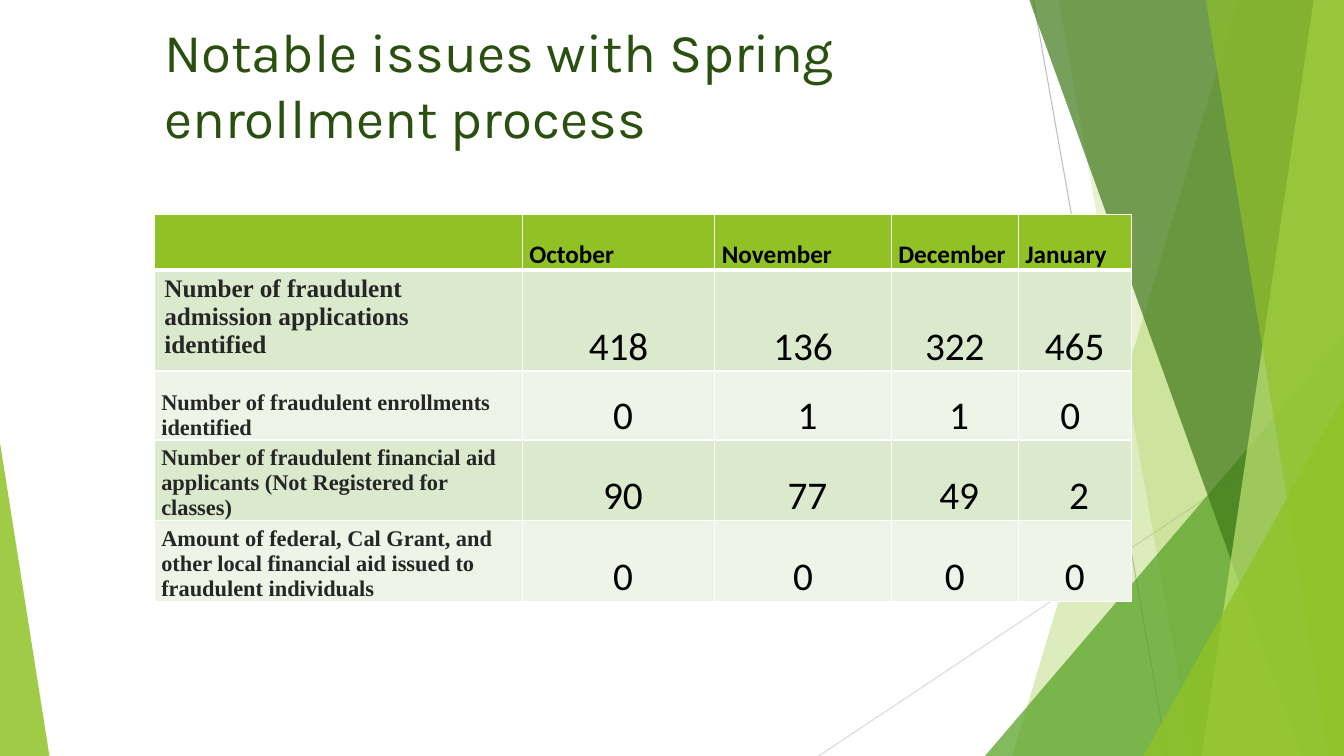
"""Build a slide with a table of fraud counts by month beside green shards."""
import lxml.etree
import pptx
import pptx.dml.color
import pptx.enum.shapes
import pptx.enum.text
import pptx.oxml
import pptx.oxml.ns
import pptx.util

COLORS = {
    "lime": "90C226", "green": "54A021", "forest": "3F7819", "pale": "C0E474",
    "title": "2A5010", "label": "262626", "black": "000000", "white": "FFFFFF",
    "band": "DBE9CD", "light_band": "EEF4E8", "gray": "BFBFBF", "light_gray": "D9D9D9",
}
qn = pptx.oxml.ns.qn
Anchor = pptx.enum.text.MSO_ANCHOR
Align = pptx.enum.text.PP_ALIGN

deck = pptx.Presentation()
deck.slide_width = pptx.util.Inches(13.33)
deck.slide_height = pptx.util.Inches(7.5)
x_share = deck.slide_width / 100
y_share = deck.slide_height / 100
slide = deck.slides.add_slide(deck.slide_layouts[6])


def write(frame, text, size=18, font="Calibri", color="black", bold=False,
          align=Align.LEFT, anchor=Anchor.BOTTOM):
    frame.word_wrap = True
    frame.vertical_anchor = anchor
    paragraph = frame.paragraphs[0]
    paragraph.alignment = align
    run = paragraph.add_run()
    run.text = text
    run.font.size = pptx.util.Pt(size)
    run.font.name = font
    run.font.bold = bold
    run.font.color.rgb = pptx.dml.color.RGBColor.from_string(COLORS[color])


rays = [(76.89, 0, 86.87, 100, "gray"), (100, 53.73, 60.92, 100, "light_gray")]
for x1, y1, x2, y2, color in rays:
    ray = slide.shapes.add_connector(
        pptx.enum.shapes.MSO_CONNECTOR.STRAIGHT,
        round(x1 * x_share), round(y1 * y_share), round(x2 * x_share), round(y2 * y_share))
    ray.line.color.rgb = pptx.dml.color.RGBColor.from_string(COLORS[color])
    ray.line.width = pptx.util.Pt(0.75)
    lxml.etree.SubElement(ray._element.spPr, qn("a:effectLst"))

shards = [
    ("band", (92.12, 75.32), "lime", 30),
    ("band", (78.77, 88.75), "lime", 20),
    ("triangle", (73.29, 44.4, 26.71, 1), "green", 72),
    ("band", (76.59, 96.85), "forest", 70),
    ("band", (97.75, 89.42), "pale", 70),
    ("band", (89.72, 98.87), "lime", 65),
    ("triangle", (85.07, 52.4, 14.93, 1), "lime", 80),
    ("triangle", (0, 58.53, 3.68, 0), "lime", 85),
]
for outline, place, color, opacity in shards:
    if outline == "band":
        top_x, bottom_x = place
        corners = [(100, 0), (100, 100), (bottom_x, 100)]
        edge = slide.shapes.build_freeform(round(top_x * x_share), 0)
        edge.add_line_segments([(x * x_share, y * y_share) for x, y in corners])
        shard = edge.convert_to_shape()
    else:
        left, top, width, apex = place
        shard = slide.shapes.add_shape(
            pptx.enum.shapes.MSO_SHAPE.ISOSCELES_TRIANGLE,
            round(left * x_share), round(top * y_share),
            round(width * x_share), round((100 - top) * y_share))
        shard.adjustments[0] = apex
    shard.shadow.inherit = False
    shard.line.fill.background()
    shard.fill.solid()
    shard.fill.fore_color.rgb = pptx.dml.color.RGBColor.from_string(COLORS[color])
    tint = shard._element.spPr.find(qn("a:solidFill"))[0]
    lxml.etree.SubElement(tint, qn("a:alpha"), val=str(opacity * 1000))

heading = slide.shapes.add_textbox(
    round(11.48 * x_share), round(1.47 * y_share), round(70.52 * x_share), round(19.2 * y_share))
write(heading.text_frame, "Notable issues with Spring enrollment process",
      size=39, font="Karla", color="title", anchor=Anchor.MIDDLE)

records = [
    ["", "October", "November ", "December", "January"],
    ["Number of fraudulent admission applications identified", "418", "136", "322", "465"],
    ["Number of fraudulent enrollments identified", " 0", " 1", " 1", "0 "],
    ["Number of fraudulent financial aid applicants (Not Registered for classes)",
     " 90", " 77", " 49", " 2"],
    ["Amount of federal, Cal Grant, and other local financial aid issued to fraudulent individuals",
     " 0", "0", "0", "0"],
]
column_shares = [27.38, 14.33, 13.13, 9.45, 8.4]
row_shares = [7.33, 12.2, 9.13, 9.87, 9.8]
counts = slide.shapes.add_table(
    len(records), len(column_shares), round(11.48 * x_share), round(28.4 * y_share),
    round(sum(column_shares) * x_share), round(sum(row_shares) * y_share)).table
counts.horz_banding = False
for column, share in zip(counts.columns, column_shares):
    column.width = round(share * x_share)
for row, share in zip(counts.rows, row_shares):
    row.height = round(share * y_share)

for r, record in enumerate(records):
    row_fill = "lime" if r == 0 else "band" if r % 2 else "light_band"
    for c, entry in enumerate(record):
        cell = counts.cell(r, c)
        cell.fill.solid()
        cell.fill.fore_color.rgb = pptx.dml.color.RGBColor.from_string(COLORS[row_fill])
        roomy = r == 1 and c == 0
        if not roomy:
            cell.margin_left = cell.margin_right = pptx.util.Inches(0.07)
            cell.margin_top = cell.margin_bottom = 0
        if r == 0 and entry:
            write(cell.text_frame, entry, bold=True)
        elif c > 0:
            write(cell.text_frame, entry, size=28, align=Align.CENTER)
        elif entry:
            write(cell.text_frame, entry, size=18 if roomy else 16,
                  font="Times New Roman", color="label", bold=True)
        cell.vertical_anchor = Anchor.TOP if roomy else Anchor.BOTTOM
        for i, side in enumerate(["lnL", "lnR", "lnT", "lnB"]):
            heavy = (r, side) in [(0, "lnB"), (1, "lnT")]
            border = pptx.oxml.parse_xml(
                f'<a:{side} {pptx.oxml.ns.nsdecls("a")} w="{38100 if heavy else 12700}">'
                f'<a:solidFill><a:srgbClr val="{COLORS["white"]}"/></a:solidFill></a:{side}>')
            cell._tc.get_or_add_tcPr().insert(i, border)

deck.save("out.pptx")
